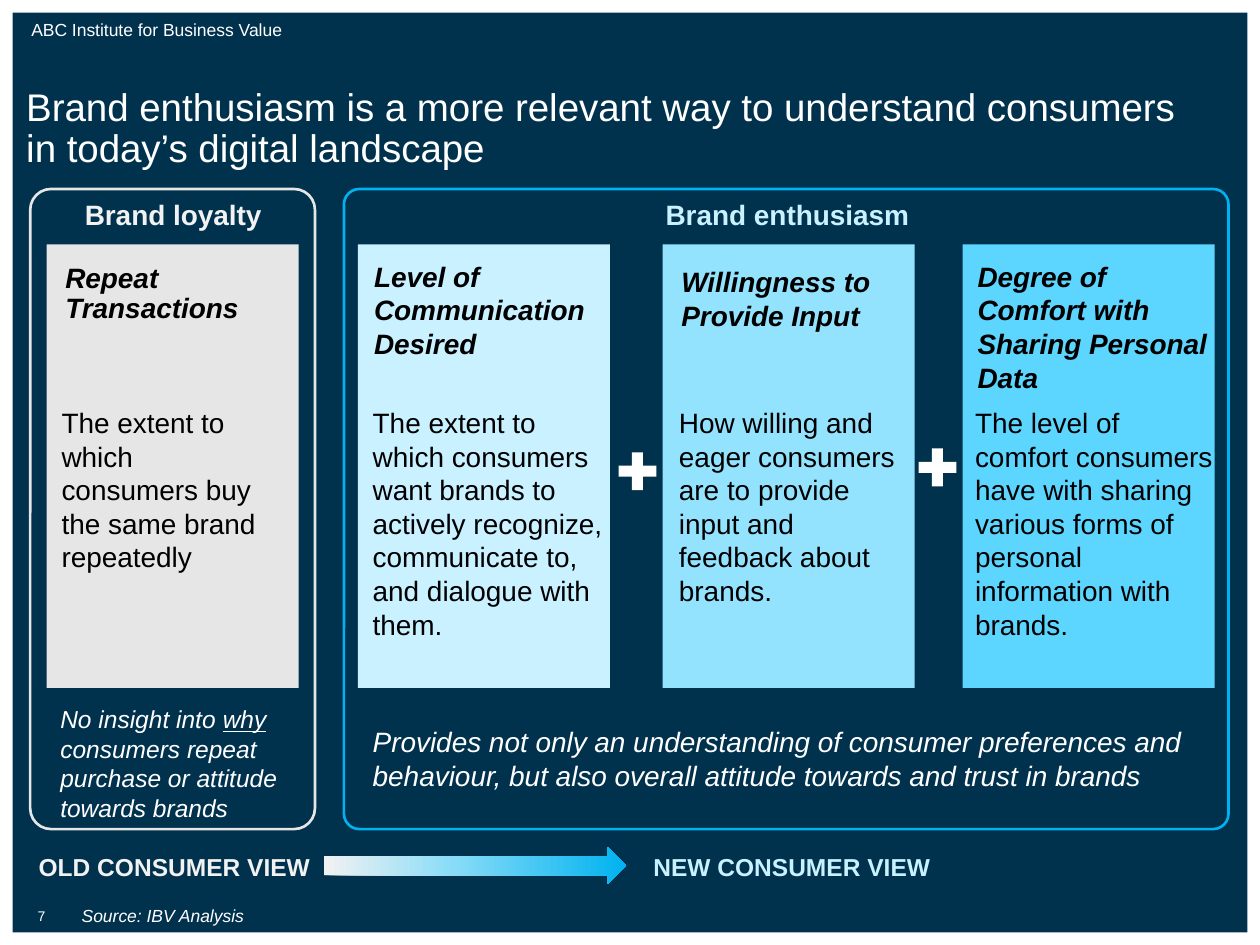
from copy import deepcopy

from pptx import Presentation
from pptx.dml.color import RGBColor
from pptx.enum.shapes import MSO_SHAPE as Shape
from pptx.enum.text import MSO_ANCHOR as Anchor, PP_ALIGN as Align
from pptx.oxml.ns import qn
from pptx.util import Inches, Pt

NAVY = RGBColor(0x00, 0x32, 0x4E)
WHITE = RGBColor(0xFF, 0xFF, 0xFF)
BLACK = RGBColor(0x00, 0x00, 0x00)
PALE_GREY = RGBColor(0xF2, 0xF2, 0xF2)
GREY = RGBColor(0xE6, 0xE6, 0xE6)
ICE = RGBColor(0xC9, 0xF1, 0xFF)
SKY = RGBColor(0x93, 0xE3, 0xFF)
AQUA = RGBColor(0x5C, 0xD5, 0xFF)
CYAN = RGBColor(0x00, 0xB2, 0xEF)
ARROW_MIDDLE = RGBColor(0x88, 0xDC, 0xF8)

HEADING = {"size": Pt(16), "bold": True}
CARD_TITLE = {"size": Pt(16), "bold": True, "italic": True}
BODY = {"size": Pt(16)}
VIEW = {"size": Pt(14), "bold": True}

CARD_TOP, CARD_WIDTH, CARD_HEIGHT = 1.94, 2, 3.52


class SlideBuilder:
    font_name = "Arial"

    def __init__(self, slide):
        self.slide = slide

    def text(self, box, words, style, color=WHITE, align=Align.LEFT,
             anchor=Anchor.TOP, line_spacing=None, inset=0.05):
        """Words is a string, or a list of (string, extra format) runs."""
        frame = self.slide.shapes.add_textbox(*map(Inches, box)).text_frame
        frame.word_wrap = True
        frame.vertical_anchor = anchor
        frame.margin_top = frame.margin_bottom = Inches(inset)
        paragraph = frame.paragraphs[0]
        paragraph.alignment = align
        paragraph.line_spacing = line_spacing
        for part, extra in [(words, {})] if isinstance(words, str) else words:
            run = paragraph.add_run()
            run.text = part
            run.font.color.rgb = color
            for key, value in {"name": self.font_name, **style, **extra}.items():
                setattr(run.font, key, value)

    def shape(self, kind, box, fill=None, outline=None, adjustment=None):
        shape = self.slide.shapes.add_shape(kind, *map(Inches, box))
        shape.shadow.inherit = False
        if adjustment is not None:
            shape.adjustments[0] = adjustment
        if fill is None:
            shape.fill.background()
        else:
            shape.fill.solid()
            shape.fill.fore_color.rgb = fill
        if outline is None:
            shape.line.fill.background()
        else:
            shape.line.color.rgb = outline
            shape.line.width = Pt(1.5)
        return shape

    def gradient_arrow(self, box, stops):
        arrow = self.shape(Shape.RIGHT_ARROW, box)
        arrow.fill.gradient()
        arrow.fill.gradient_angle = 0
        stop_list = arrow.element.spPr.find(qn("a:gradFill")).find(qn("a:gsLst"))
        while len(stop_list) < len(stops):
            stop_list.append(deepcopy(stop_list[0]))
        for stop, (position, color) in zip(arrow.fill.gradient_stops, stops):
            stop.position = position
            stop.color.rgb = color

    def card(self, left, fill, title_box, title, body_box, body, title_spacing=None):
        self.shape(Shape.RECTANGLE, (left, CARD_TOP, CARD_WIDTH, CARD_HEIGHT), fill)
        self.text(title_box, title, CARD_TITLE, BLACK, line_spacing=title_spacing)
        self.text(body_box, body, BODY, BLACK)


def main():
    prs = Presentation()
    prs.slide_width, prs.slide_height = Inches(10), Inches(7.5)
    build = SlideBuilder(prs.slides.add_slide(prs.slide_layouts[6]))

    # Backdrop, header and title
    build.shape(Shape.RECTANGLE, (0.1, 0.1, 9.8, 7.3), NAVY)
    build.text((0.15, 0.12, 8.65, 0.2), "ABC Institute for Business Value",
               {"size": Pt(10)}, anchor=Anchor.BOTTOM, inset=0)
    build.text((0.11, 0.65, 9.62, 0.81),
               "Brand enthusiasm is a more relevant way to understand consumers "
               "in today’s digital landscape", {"size": Pt(22)}, line_spacing=0.9)

    # Panels with their headings
    for box, outline, corner in (
        ((0.24, 1.5, 2.26, 5.08), GREY, 0.073),
        ((2.73, 1.5, 7.02, 5.08), CYAN, 0.024),
    ):
        build.shape(Shape.ROUNDED_RECTANGLE, box, outline=outline, adjustment=corner)
    build.text((0.38, 1.52, 1.99, 0.54), "Brand loyalty", HEADING, PALE_GREY, Align.CENTER)
    build.text((2.85, 1.52, 6.8, 0.54), "Brand enthusiasm", HEADING, ICE, Align.CENTER)

    # Cards
    build.card(0.37, GREY, (0.42, 2.05, 1.93, 0.54), "Repeat Transactions",
               (0.39, 3.17, 1.85, 2.05),
               "The extent to which consumers buy the same brand repeatedly", 0.9)
    build.card(2.84, ICE, (2.87, 2.01, 1.88, 0.54), "Level of Communication Desired",
               (2.86, 3.17, 2.03, 2.36),
               "The extent to which consumers want brands to actively recognize, "
               "communicate to, and dialogue with them.")
    build.card(5.26, SKY, (5.31, 2.05, 1.83, 0.54), "Willingness to Provide Input",
               (5.29, 3.17, 1.98, 2.36),
               "How willing and eager consumers are to provide input and feedback "
               "about brands.")
    build.card(7.64, AQUA, (7.66, 2.01, 2.05, 0.8),
               "Degree of Comfort with Sharing Personal Data",
               (7.64, 3.17, 2.09, 2.36),
               "The level of comfort consumers have with sharing various forms of "
               "personal information with brands.")
    for left, top in ((4.91, 3.59), (7.29, 3.56)):
        build.shape(Shape.CROSS, (left, top, 0.3, 0.3), WHITE, adjustment=0.355)

    # Conclusions under the cards
    build.text((0.38, 5.54, 1.98, 0.75),
               [("No insight into ", {}), ("why", {"underline": True}),
                (" consumers repeat purchase or attitude towards brands", {})],
               {"size": Pt(14), "italic": True})
    build.text((2.86, 5.61, 6.8, 0.82),
               "Provides not only an understanding of consumer preferences and "
               "behaviour, but also overall attitude towards and trust in brands",
               {"size": Pt(16), "italic": True}, anchor=Anchor.MIDDLE)

    # Old view to new view
    build.text((0.2, 6.68, 2.37, 0.39), "OLD CONSUMER VIEW", VIEW, PALE_GREY,
               Align.CENTER, Anchor.MIDDLE)
    build.text((4.97, 6.68, 2.63, 0.39), "NEW CONSUMER VIEW", VIEW, ICE,
               Align.CENTER, Anchor.MIDDLE)
    build.gradient_arrow((2.57, 6.72, 2.4, 0.3),
                         [(0, PALE_GREY), (0.43, ARROW_MIDDLE), (1, CYAN)])

    # Footer
    build.text((0.2, 7.15, 0.4, 0.2), "7", {"size": Pt(8)})
    build.text((0.55, 7.13, 7.85, 0.25), "Source: IBV Analysis",
               {"size": Pt(10), "italic": True})

    prs.save("out.pptx")


if __name__ == "__main__":
    main()
